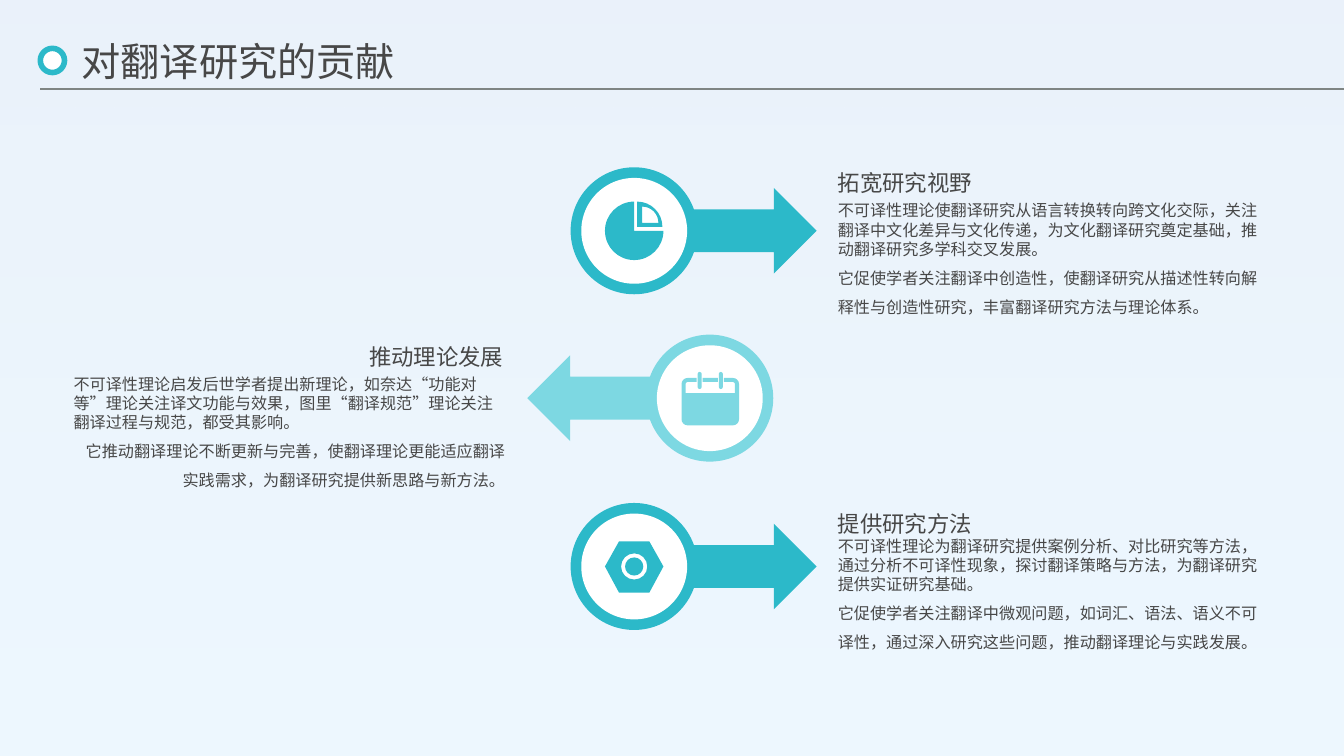
import math

import pptx
import pptx.dml.color
import pptx.enum.shapes
import pptx.enum.text
import pptx.oxml
import pptx.oxml.ns
import pptx.util
from pptx.util import Inches, Pt

SHAPE = pptx.enum.shapes.MSO_SHAPE
ANCHOR = pptx.enum.text.MSO_ANCHOR
ALIGN = pptx.enum.text.PP_ALIGN
NAMESPACE = pptx.oxml.ns.nsdecls("a")

THEME = {
    "font": "Noto Sans CJK SC",
    "text": "474747", "white": "FFFFFF", "rule": "7F8583",
    "teal": "2CB9C9", "aqua": "7DD8E2",
    "backdrop": [("BFE4FF", 27), ("C1D8F2", 33)],
    "heading": {"size": Pt(28), "spacing": 1.2, "anchor": ANCHOR.MIDDLE},
    "title": {"size": Pt(16), "spacing": 1.3, "anchor": ANCHOR.BOTTOM},
    "body": {"size": Pt(11.5), "spacing": 1.5, "anchor": ANCHOR.TOP},
}
HEADING = "对翻译研究的贡献"
CONTRIBUTIONS = [
    {"title": "拓宽研究视野",
     "body": ["不可译性理论使翻译研究从语言转换转向跨文化交际，关注翻译中文化差异与文化传递，为文化翻译研究奠定基础，推动翻译研究多学科交叉发展。",
              "它促使学者关注翻译中创造性，使翻译研究从描述性转向解释性与创造性研究，丰富翻译研究方法与理论体系。"],
     "icon": "pie", "color": "teal", "points_left": False,
     "center": (6.29, 2.29), "title_at": (8.31, 1.26), "body_at": (8.31, 1.99)},
    {"title": "推动理论发展",
     "body": ["不可译性理论启发后世学者提出新理论，如奈达“功能对等”理论关注译文功能与效果，图里“翻译规范”理论关注翻译过程与规范，都受其影响。",
              "它推动翻译理论不断更新与完善，使翻译理论更能适应翻译实践需求，为翻译研究提供新思路与新方法。"],
     "icon": "calendar", "color": "aqua", "points_left": True,
     "center": (7.04, 3.95), "title_at": (0.71, 2.99), "body_at": (0.73, 3.71)},
    {"title": "提供研究方法",
     "body": ["不可译性理论为翻译研究提供案例分析、对比研究等方法，通过分析不可译性现象，探讨翻译策略与方法，为翻译研究提供实证研究基础。",
              "它促使学者关注翻译中微观问题，如词汇、语法、语义不可译性，通过深入研究这些问题，推动翻译理论与实践发展。"],
     "icon": "nut", "color": "teal", "points_left": False,
     "center": (6.29, 5.62), "title_at": (8.31, 4.65), "body_at": (8.31, 5.32)},
]
TEXT_WIDTH, TITLE_HEIGHT, BODY_HEIGHT = 4.28, 0.68, 1.43
DISC, HOLE = 1.26, 1.05
ARROW_WIDTH, ARROW_HEIGHT, ARROW_OFFSET = 1.55, 0.85, 0.26


def arc(x, y, radius, start, end):
    """Nodes of an arc, one curve per quarter; degrees run clockwise from the right.

    A node is a tuple of points: one for a corner, three for a Bezier curve.
    """
    quarters = abs(end - start) // 90
    turn = math.radians((end - start) / quarters)
    handle = 4 / 3 * math.tan(turn / 4)

    def point(angle, pull=0):
        cosine, sine = math.cos(angle), math.sin(angle)
        return x + radius * (cosine - pull * sine), y + radius * (sine + pull * cosine)

    angles = [math.radians(start) + turn * i for i in range(quarters + 1)]
    curves = [(point(a, handle), point(b, -handle), point(b))
              for a, b in zip(angles, angles[1:])]
    return [(point(angles[0]),)] + curves


def corners(*points):
    return [(point,) for point in points]


def pin(x):
    """Upright capsule on the calendar's top edge."""
    return arc(x, -0.24, 0.02, 180, 360) + arc(x, -0.11, 0.02, 0, 180)


# Closed outlines, measured from the centre of the disc
ICONS = {
    "pie": [
        arc(0, 0, 0.29, 0, 270) + corners((0, 0)),
        arc(0.03, -0.04, 0.25, 270, 360) + corners((0.03, -0.04)),
        arc(0.08, -0.08, 0.16, 270, 360) + corners((0.08, -0.08)),
    ],
    "calendar": [
        corners((-0.13, -0.16), (-0.13, -0.2))
        + arc(-0.22, -0.14, 0.06, 270, 180) + arc(-0.22, 0.21, 0.06, 180, 90)
        + arc(0.23, 0.21, 0.06, 90, 0) + arc(0.23, -0.14, 0.06, 0, -90)
        + corners((0.14, -0.2), (0.14, -0.16)) + arc(0.23, -0.14, 0.02, -90, 0)
        + corners((0.25, -0.05), (-0.24, -0.05)) + arc(-0.22, -0.14, 0.02, 180, 270),
        corners((-0.07, -0.2), (0.08, -0.2), (0.08, -0.16), (-0.07, -0.16)),
        pin(-0.1), pin(0.11),
    ],
    "nut": [
        corners((-0.15, -0.25), (0.15, -0.25), (0.29, 0),
                (0.15, 0.26), (-0.15, 0.26), (-0.29, 0)),
        arc(0, 0, 0.13, 0, 360),
        arc(0, 0, 0.09, 0, 360),
    ],
}


def rgb(name):
    return pptx.dml.color.RGBColor.from_string(THEME[name])


def apply(target, values):
    for name, value in values.items():
        setattr(target, name, value)


def paint(shape, color):
    shape.shadow.inherit = False
    shape.fill.solid()
    shape.fill.fore_color.rgb = rgb(color)
    shape.line.fill.background()


def add_shape(slide, kind, box, color):
    shape = slide.shapes.add_shape(kind, *map(Inches, box))
    paint(shape, color)
    return shape


def add_text(slide, box, text, style, alignment=ALIGN.LEFT):
    look = THEME[style]
    frame = slide.shapes.add_textbox(*map(Inches, box)).text_frame
    apply(frame, {"word_wrap": True, "vertical_anchor": look["anchor"], "margin_left": 0,
                  "margin_right": 0, "margin_top": 0, "margin_bottom": 0})
    paragraph = frame.paragraphs[0]
    apply(paragraph, {"alignment": alignment, "line_spacing": look["spacing"]})
    run = paragraph.add_run()
    run.text = text
    apply(run.font, {"size": look["size"], "name": THEME["font"]})
    run.font.color.rgb = rgb("text")
    run.font._element.append(
        pptx.oxml.parse_xml(f'<a:ea {NAMESPACE} typeface="{THEME["font"]}"/>'))


def add_backdrop(slide, width, height):
    backdrop = add_shape(slide, SHAPE.RECTANGLE, (0, 0, width, height), "white")
    backdrop.fill.gradient()
    backdrop.fill.gradient_angle = 90
    for stop, (color, opacity) in zip(backdrop.fill.gradient_stops, THEME["backdrop"]):
        stop.color.rgb = pptx.dml.color.RGBColor.from_string(color)
    colors = backdrop._element.spPr.iter(pptx.oxml.ns.qn("a:srgbClr"))
    for element, (color, opacity) in zip(colors, THEME["backdrop"]):
        element.append(pptx.oxml.parse_xml(f'<a:alpha {NAMESPACE} val="{opacity * 1000}"/>'))


def add_icon(slide, outlines, center, color):
    """Draw straight outlines, then bend the segments that are curves."""
    outlines = [[[(Inches(center[0] + x), Inches(center[1] + y)) for x, y in node]
                 for node in outline] for outline in outlines]
    builder = slide.shapes.build_freeform(*outlines[0][0][-1])
    for index, outline in enumerate(outlines):
        if index:
            builder.move_to(*outline[0][-1])
        builder.add_line_segments([node[-1] for node in outline[1:]], close=True)
    shape = builder.convert_to_shape()
    paint(shape, color)
    segments = list(shape._element.iter(pptx.oxml.ns.qn("a:lnTo")))
    nodes = [node for outline in outlines for node in outline[1:]]
    for segment, node in zip(segments, nodes):
        if len(node) == 3:
            points = "".join(f'<a:pt x="{x - shape.left}" y="{y - shape.top}"/>' for x, y in node)
            segment.getparent().replace(segment, pptx.oxml.parse_xml(
                f"<a:cubicBezTo {NAMESPACE}>{points}</a:cubicBezTo>"))


def add_contribution(slide, item):
    x, y = item["center"]
    color, points_left = item["color"], item["points_left"]
    side = ALIGN.RIGHT if points_left else ALIGN.LEFT
    add_text(slide, (*item["title_at"], TEXT_WIDTH, TITLE_HEIGHT), item["title"], "title", side)
    add_text(slide, (*item["body_at"], TEXT_WIDTH, BODY_HEIGHT),
             "\n".join(item["body"]), "body", side)
    left = x - ARROW_OFFSET - ARROW_WIDTH if points_left else x + ARROW_OFFSET
    arrow = add_shape(slide, SHAPE.RIGHT_ARROW,
                      (left, y - ARROW_HEIGHT / 2, ARROW_WIDTH, ARROW_HEIGHT), color)
    if points_left:
        arrow._element.spPr.xfrm.set("flipH", "1")
    for size, fill in ((DISC, color), (HOLE, "white")):
        add_shape(slide, SHAPE.OVAL, (x - size / 2, y - size / 2, size, size), fill)
    add_icon(slide, ICONS[item["icon"]], item["center"], color)


def add_heading(slide, width):
    ring = add_shape(slide, SHAPE.OVAL, (0.4, 0.48, 0.24, 0.24), "white")
    ring.line.color.rgb = rgb("teal")
    ring.line.width = Pt(4)
    add_text(slide, (0.81, 0.32, 11.58, 0.47), HEADING, "heading")
    rule = slide.shapes.add_connector(pptx.enum.shapes.MSO_CONNECTOR.STRAIGHT,
                                      *map(Inches, (0.4, 0.88, width, 0.88)))
    rule.line.color.rgb = rgb("rule")
    rule.line.width = Pt(1.25)
    rule._element.spPr.append(pptx.oxml.parse_xml(f"<a:effectLst {NAMESPACE}/>"))


def main():
    width, height = 13.33, 7.5
    presentation = pptx.Presentation()
    apply(presentation, {"slide_width": Inches(width), "slide_height": Inches(height)})
    slide = presentation.slides.add_slide(presentation.slide_layouts[6])
    add_backdrop(slide, width, height)
    for item in CONTRIBUTIONS:
        add_contribution(slide, item)
    add_heading(slide, width)
    presentation.save("out.pptx")


if __name__ == "__main__":
    main()
